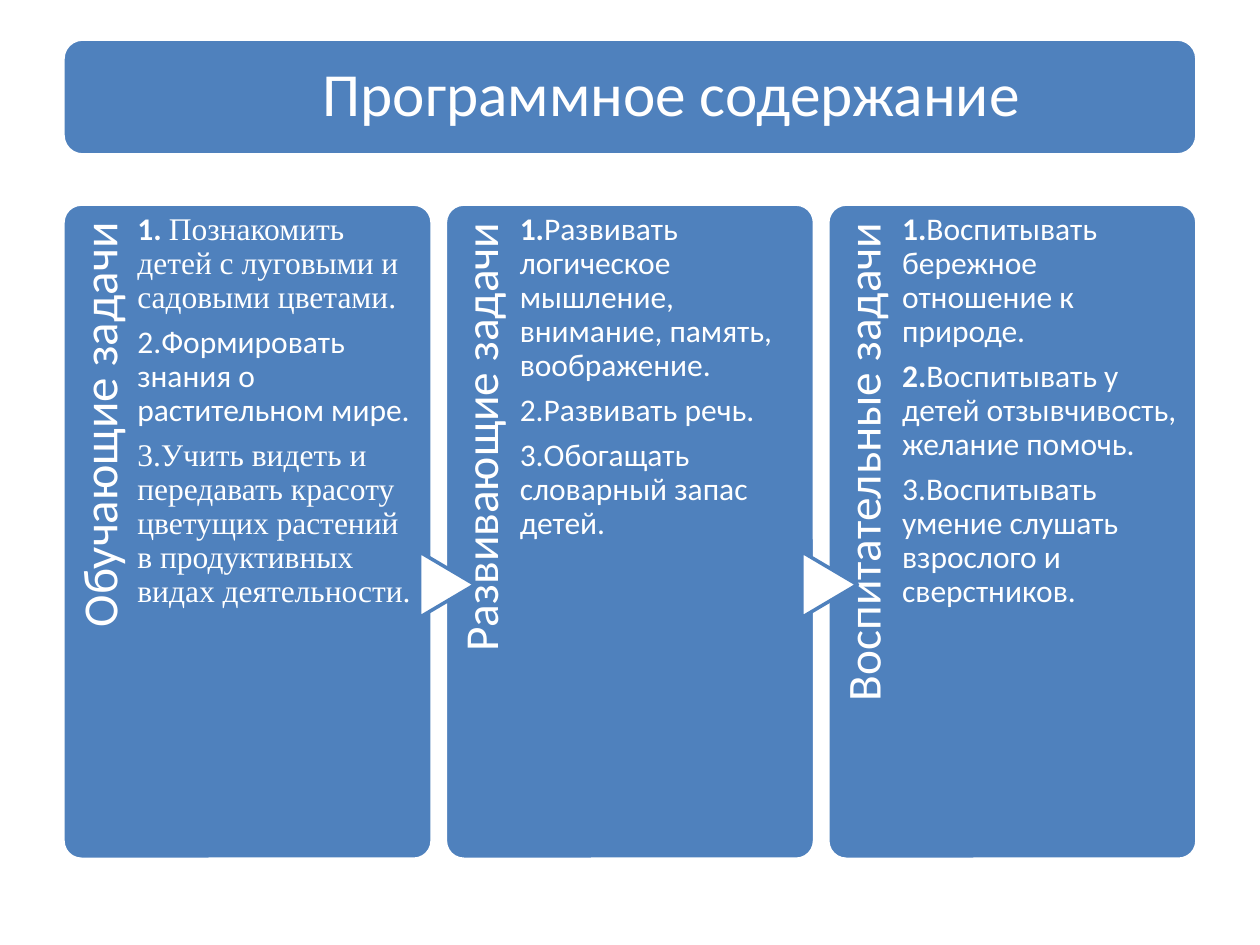
from lxml.etree import SubElement
from pptx import Presentation
from pptx.dml.color import RGBColor
from pptx.enum.shapes import MSO_SHAPE
from pptx.enum.text import MSO_ANCHOR, MSO_AUTO_SIZE, PP_ALIGN
from pptx.oxml.ns import qn
from pptx.util import Inches, Pt

COLS, ROWS = 100, 75  # slide grid, square cells
SANS, SERIF = "Calibri", "Times New Roman"


def color(hex_code):
    return RGBColor.from_string(hex_code)


def write(tf, paragraphs, size, align=PP_ALIGN.LEFT, insets=(0, 0, 0, 0),
          anchor=MSO_ANCHOR.TOP, fill="FFFFFF"):
    """Each paragraph is a list of (text, font, bold); insets are in inches."""
    tf.word_wrap, tf.auto_size = True, MSO_AUTO_SIZE.NONE
    tf.vertical_anchor = anchor
    tf.margin_left, tf.margin_top, tf.margin_right, tf.margin_bottom = map(Inches, insets)
    for i, runs in enumerate(paragraphs):
        p = tf.add_paragraph() if i else tf.paragraphs[0]
        pPr = p._p.get_or_add_pPr()
        pPr.set("marL", "0")
        pPr.set("indent", "0")
        SubElement(pPr, qn("a:buNone"))
        p.alignment, p.line_spacing = align, 0.9
        p.space_before, p.space_after = Pt(0), Pt(0.35 * size)
        for text, font, bold in runs:
            r = p.add_run()
            r.text = text
            r.font.name, r.font.size, r.font.bold = font, Pt(size), bold
            r.font.color.rgb = color(fill)


class Deck:
    blue, white = "4F81BD", "FFFFFF"

    def __init__(self, prs, layout):
        self.prs = prs
        self.s = prs.slides.add_slide(prs.slide_layouts[layout])

    def area(self, x, y, w, h):
        cw, ch = self.prs.slide_width / COLS, self.prs.slide_height / ROWS
        return [round(v) for v in (x * cw, y * ch, w * cw, h * ch)]

    def shape(self, kind, at, fill, line, rotation=0, radius=None):
        sp = self.s.shapes.add_shape(kind, *self.area(*at))
        sp.shadow.inherit = False
        sp.fill.solid()
        sp.fill.fore_color.rgb = color(fill)
        sp.line.color.rgb = color(line)
        sp.line.width = Pt(2)
        sp.rotation = rotation
        if radius is not None:
            sp.adjustments[0] = radius

    def panel(self, at, radius):
        self.shape(MSO_SHAPE.ROUNDED_RECTANGLE, at, self.blue, self.white, radius=radius)

    def arrow(self, at):
        self.shape(MSO_SHAPE.FLOWCHART_EXTRACT, at, self.white, self.blue, rotation=90)

    def side_label(self, text, at, size):
        sp = self.s.shapes.add_textbox(*self.area(*at))
        sp.rotation = 270
        write(sp.text_frame, [[(text, SANS, False)]], size, PP_ALIGN.RIGHT,
              (0, 0.1, 0.14, 0))

    def placeholder(self, index, at, paragraphs, size, **style):
        sp = self.s.placeholders[index]
        sp.left, sp.top, sp.width, sp.height = self.area(*at)
        self.s.shapes._spTree.append(sp.element)  # in front of its panel
        write(sp.text_frame, paragraphs, size, **style)

    def drop(self, index):
        element = self.s.placeholders[index].element
        element.getparent().remove(element)


COLUMNS = [
    ("Обучающие задачи", 28, [
        [("1. ", SANS, True),
         ("Познакомить детей с луговыми и садовыми цветами.", SERIF, False)],
        [("2.Формировать знания о растительном мире.", SANS, False)],
        [("3.Учить видеть и передавать красоту цветущих растений в продуктивных "
          "видах деятельности.", SERIF, False)]]),
    ("Развивающие задачи", 27, [
        [("1.", SANS, True),
         ("Развивать логическое мышление, внимание, память, воображение.", SANS, False)],
        [("2.Развивать речь.", SANS, False)],
        [("3.Обогащать словарный запас детей.", SANS, False)]]),
    ("Воспитательные задачи", 27, [
        [("1.", SANS, True), ("Воспитывать бережное отношение к природе.", SANS, False)],
        [("2.", SANS, True),
         ("Воспитывать у детей отзывчивость, желание помочь.", SANS, False)],
        [("3.Воспитывать умение слушать взрослого и сверстников.", SANS, False)]]),
]


def main():
    prs = Presentation()
    prs.slide_width, prs.slide_height = Inches(10), Inches(7.5)
    deck = Deck(prs, 4)  # comparison layout: a title and four bodies

    # Title banner
    left, full = 5, 90
    deck.panel((left, 3.1, full, 9.2), 0.17)
    deck.placeholder(0, (5.4, 3.5, 89.1, 8.3),
                     [[("Программное содержание", SANS, False)]], 35,
                     insets=(2.02, 0.15, 0.15, 0.15), anchor=MSO_ANCHOR.MIDDLE)

    # Three task columns, with an arrow into each one after the first
    top, width, height = 16.2, 29.3, 52
    pitch = (full - width) / (len(COLUMNS) - 1)
    for i, (label, size, tasks) in enumerate(COLUMNS):
        x = left + i * pitch
        deck.panel((x, top, width, height), 0.05)
        deck.side_label(label, (x - 18.4, 34.6, 42.6, 5.9), size)
        if i:
            deck.arrow((x - 2.45, 44.2, 5.2, 4.4))
        deck.placeholder(i + 1, (x + 5.9, top, 21.8, height), tasks, 18,
                         insets=(0, 0.07, 0, 0))
    deck.drop(4)

    prs.save("out.pptx")


if __name__ == "__main__":
    main()
